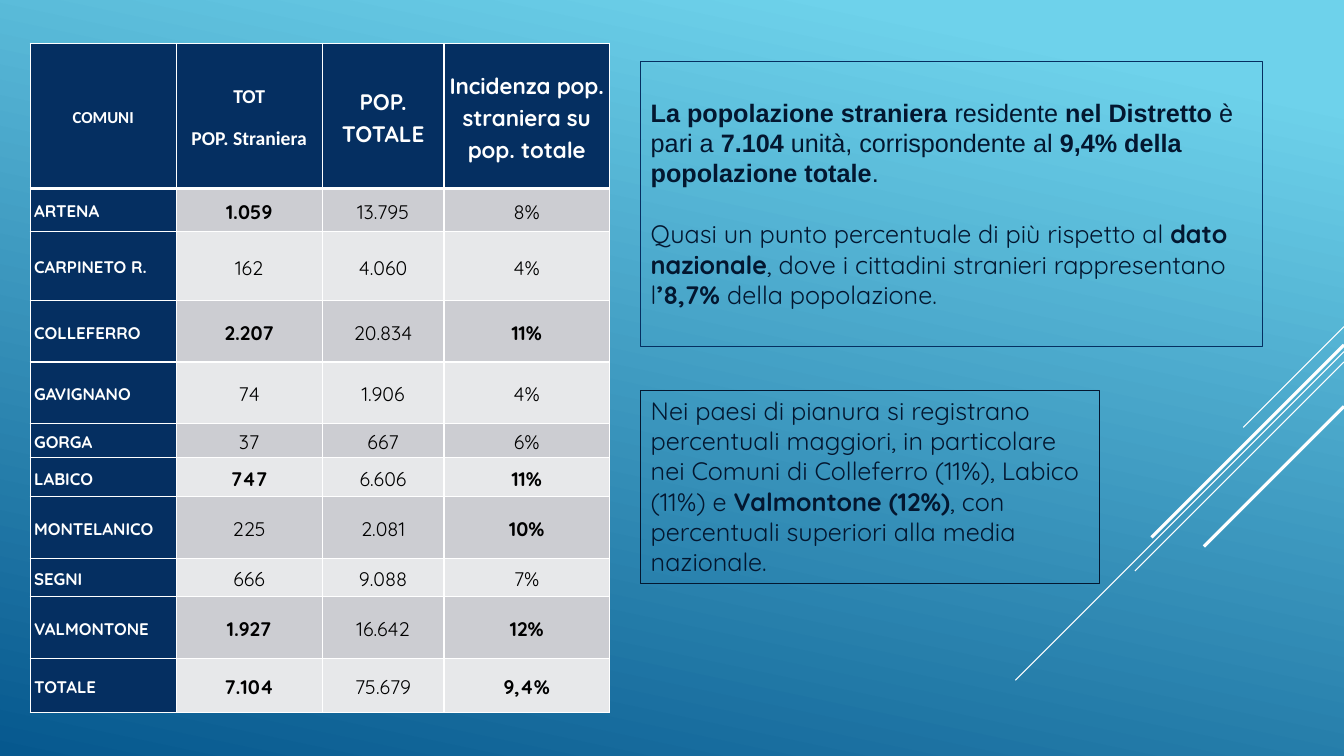
"""Build the slide on the foreign population of the district's municipalities."""
import dataclasses

import lxml.etree
import pptx
import pptx.dml.color
import pptx.enum.shapes
import pptx.enum.text
import pptx.oxml.ns
import pptx.presentation
import pptx.slide
import pptx.table
import pptx.text.text
import pptx.util

Cm = pptx.util.Cm
Pt = pptx.util.Pt


@dataclasses.dataclass(frozen=True)
class Theme:
    white: str = "FFFFFF"
    black: str = "000000"
    navy: str = "052F61"
    ink: str = "031730"
    bands: tuple[str, str] = ("CCCDD2", "E7E8EA")
    sky: str = "6ED2EB"
    sea: str = "06588E"
    main_font: str = "Quicksand"
    header_font: str = "Calibri"
    note_font: str = "Arial"
    label_size: int = 12
    figure_size: int = 14
    heading_size: int = 16
    note_size: int = 18


THEME = Theme()


@dataclasses.dataclass(frozen=True)
class TextStyle:
    size: int
    color: str
    font: str = THEME.main_font


@dataclasses.dataclass(frozen=True)
class Heading:
    lines: tuple[str, ...]
    width: float
    style: TextStyle


@dataclasses.dataclass(frozen=True)
class Municipality:
    height: float
    name: str
    foreign: str
    total: str
    share: str


@dataclasses.dataclass(frozen=True)
class NoteParagraph:
    text: str
    style: TextStyle
    space_before: float = 0


@dataclasses.dataclass(frozen=True)
class Note:
    left: float
    top: float
    width: float
    height: float
    line_color: str
    top_margin: float
    paragraphs: tuple[NoteParagraph, ...]


@dataclasses.dataclass(frozen=True)
class Ray:
    top: float
    reach: float
    weight: float


SLIDE_WIDTH, SLIDE_HEIGHT = 33.87, 19.05
TABLE_LEFT, TABLE_TOP, HEADER_HEIGHT = 0.76, 1.09, 3.66
THIN, THICK = 1, 3

LABEL = TextStyle(THEME.label_size, THEME.white)
FIGURE = TextStyle(THEME.figure_size, THEME.black)
HEADING = TextStyle(THEME.heading_size, THEME.white)
NOTE = TextStyle(THEME.note_size, THEME.ink)
NOTE_LEAD = TextStyle(THEME.note_size, THEME.ink, THEME.note_font)

HEADINGS = (
    Heading(("*COMUNI*",), 3.68, TextStyle(THEME.label_size, THEME.white, THEME.header_font)),
    Heading(("*TOT*", "*POP. Straniera*"), 3.68,
            TextStyle(THEME.figure_size, THEME.white, THEME.header_font)),
    Heading(("*POP. TOTALE*",), 3.07, HEADING),
    Heading(("*Incidenza pop. straniera su pop. totale*",), 4.17, HEADING),
)

MUNICIPALITIES = (
    Municipality(1.09, "*ARTENA*", "*1.059*", "13.795", "8%"),
    Municipality(1.73, "*CARPINETO R.*", "162", "4.060", "4%"),
    Municipality(1.55, "*COLLEFERRO*", "*2.207*", "20.834", "*11%*"),
    Municipality(1.55, "*GAVIGNANO*", "74", "1.906", "4%"),
    Municipality(0.86, "*GORGA*", "37", "667", "6%"),
    Municipality(0.99, "*LABICO*", "*747*", "6.606", "*11%*"),
    Municipality(1.55, "*MONTELANICO*", "225", "2.081", "*10%*"),
    Municipality(0.97, "*SEGNI*", "666", "9.088", "7%"),
    Municipality(1.55, "*VALMONTONE*", "*1.927*", "16.642", "*12%*"),
    Municipality(1.37, "*TOTALE*", "*7.104*", "75.679", "*9,4%*"),
)

NOTES = (
    Note(16.15, 1.55, 15.67, 7.19, THEME.navy, 0.9, (
        NoteParagraph("*La popolazione straniera* residente *nel Distretto *è pari a *7.104* unità, "
                      "corrispondente al *9,4% della popolazione totale*.", NOTE_LEAD),
        NoteParagraph("Quasi un punto percentuale di più rispetto al *dato nazionale*, dove i cittadini "
                      "stranieri rappresentano l*’8,7% *della popolazione.", NOTE, 22),
    )),
    Note(16.15, 9.83, 11.56, 4.88, THEME.ink, 0.13, (
        NoteParagraph("Nei paesi di pianura si registrano percentuali maggiori, in particolare nei Comuni "
                      "di Colleferro (11%), Labico (11%) e *Valmontone (12%)*, con percentuali superiori "
                      "alla media nazionale.", NOTE),
    )),
)

RAYS = (
    Ray(8.23, 2.54, 0.75),
    Ray(8.86, 8.28, 0.75),
    Ray(9.12, 5.27, 0.75),
    Ray(8.69, 4.85, 2.25),
    Ray(10.24, 3.53, 2.25),
)


def rgb(color: str) -> pptx.dml.color.RGBColor:
    return pptx.dml.color.RGBColor.from_string(color)


def write(paragraph: pptx.text.text._Paragraph, text: str, style: TextStyle) -> None:
    """Write text, with bold parts between asterisks."""
    for index, part in enumerate(text.split("*")):
        if part:
            run = paragraph.add_run()
            run.text = part
            run.font.name = style.font
            run.font.size = Pt(style.size)
            run.font.bold = index % 2 == 1
            run.font.color.rgb = rgb(style.color)


def paint_background(slide: pptx.slide.Slide) -> None:
    fill = slide.background.fill
    fill.gradient()
    fill.gradient_angle = 258
    for stop, color, position in zip(fill.gradient_stops, (THEME.sky, THEME.sea), (0.1, 1)):
        stop.color.rgb = rgb(color)
        stop.position = position


def draw_ray(slide: pptx.slide.Slide, ray: Ray) -> None:
    connector = slide.shapes.add_connector(
        pptx.enum.shapes.MSO_CONNECTOR.STRAIGHT, Cm(SLIDE_WIDTH), Cm(ray.top),
        Cm(SLIDE_WIDTH - ray.reach), Cm(ray.top + ray.reach))
    connector.line.color.rgb = rgb(THEME.white)
    connector.line.width = Pt(ray.weight)
    lxml.etree.SubElement(connector._element.spPr, pptx.oxml.ns.qn("a:effectLst"))


def set_borders(cell: pptx.table._Cell, top: float, bottom: float) -> None:
    properties = cell._tc.get_or_add_tcPr()
    for side, weight in (("L", THIN), ("R", THIN), ("T", top), ("B", bottom)):
        border = lxml.etree.SubElement(properties, pptx.oxml.ns.qn(f"a:ln{side}"), w=str(Pt(weight)))
        fill = lxml.etree.SubElement(border, pptx.oxml.ns.qn("a:solidFill"))
        lxml.etree.SubElement(fill, pptx.oxml.ns.qn("a:srgbClr"), val=THEME.white)


def fill_cell(table: pptx.table.Table, row: int, column: int,
              lines: tuple[str, ...], style: TextStyle) -> None:
    cell = table.cell(row, column)
    set_borders(cell, THICK if row == 1 else THIN, THICK if row == 0 else THIN)
    cell.fill.solid()
    is_navy = row == 0 or column == 0
    cell.fill.fore_color.rgb = rgb(THEME.navy if is_navy else THEME.bands[(row - 1) % 2])
    cell.vertical_anchor = pptx.enum.text.MSO_ANCHOR.MIDDLE
    cell.margin_left = cell.margin_right = Cm(0.1)
    cell.margin_top = cell.margin_bottom = 0
    is_label = column == 0 and row > 0
    alignment = pptx.enum.text.PP_ALIGN.LEFT if is_label else pptx.enum.text.PP_ALIGN.CENTER
    cell.text_frame.text = "\n" * (len(lines) - 1)
    for paragraph, line in zip(cell.text_frame.paragraphs, lines):
        paragraph.alignment = alignment
        paragraph.line_spacing = 1.15
        paragraph.space_after = Pt(10)
        write(paragraph, line, style)


def draw_table(slide: pptx.slide.Slide) -> None:
    heights = [HEADER_HEIGHT, *(item.height for item in MUNICIPALITIES)]
    widths = [heading.width for heading in HEADINGS]
    table = slide.shapes.add_table(len(heights), len(widths), Cm(TABLE_LEFT), Cm(TABLE_TOP),
                                   Cm(sum(widths)), Cm(sum(heights))).table
    for table_row, height in zip(table.rows, heights):
        table_row.height = Cm(height)
    for column, heading in enumerate(HEADINGS):
        table.columns[column].width = Cm(heading.width)
        fill_cell(table, 0, column, heading.lines, heading.style)
    for row, item in enumerate(MUNICIPALITIES, start=1):
        for column, text in enumerate((item.name, item.foreign, item.total, item.share)):
            fill_cell(table, row, column, (text,), FIGURE if column else LABEL)


def draw_note(slide: pptx.slide.Slide, note: Note) -> None:
    box = slide.shapes.add_textbox(Cm(note.left), Cm(note.top), Cm(note.width), Cm(note.height))
    box.line.color.rgb = rgb(note.line_color)
    box.line.width = Pt(0.75)
    frame = box.text_frame
    frame.word_wrap = True
    frame.margin_top = Cm(note.top_margin)
    frame.text = "\n" * (len(note.paragraphs) - 1)
    for paragraph, content in zip(frame.paragraphs, note.paragraphs):
        paragraph.space_before = Pt(content.space_before)
        write(paragraph, content.text, content.style)


def main() -> None:
    presentation = pptx.Presentation()
    presentation.slide_width, presentation.slide_height = Cm(SLIDE_WIDTH), Cm(SLIDE_HEIGHT)
    slide = presentation.slides.add_slide(presentation.slide_layouts[6])
    paint_background(slide)
    for ray in RAYS:
        draw_ray(slide, ray)
    draw_table(slide)
    for note in NOTES:
        draw_note(slide, note)
    presentation.save("out.pptx")


if __name__ == "__main__":
    main()
